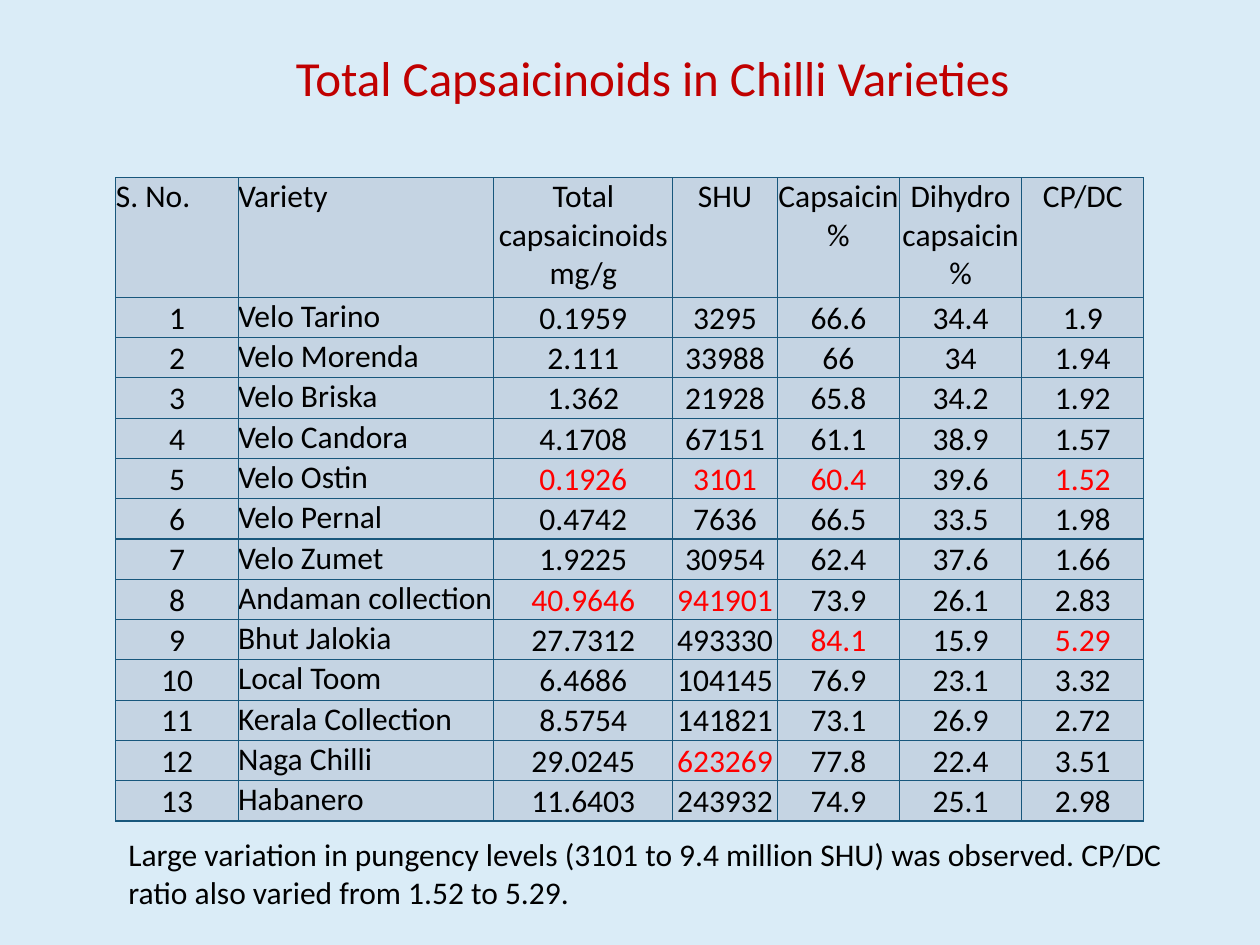
"""Build a slide with a table of total capsaicinoids in chilli varieties."""
import lxml.etree
import pptx
import pptx.dml.color
import pptx.enum.text
import pptx.oxml.ns
import pptx.util

Inches = pptx.util.Inches
ALIGN = pptx.enum.text.PP_ALIGN
ANCHOR = pptx.enum.text.MSO_ANCHOR
COLORS = {
    "background": "DAECF7",
    "cell": "C5D4E3",
    "border": "18577C",
    "title": "C00000",
    "text": "000000",
    "highlight": "FF0000",
}
COL_WIDTHS = [0.97, 2.03, 1.42, 0.83, 0.97, 0.97, 0.97]
HEADER_HEIGHT, ROW_HEIGHT = 0.95, 0.32
HEADER = ["S. No.", "Variety", "Total capsaicinoids mg/g", "SHU",
          "Capsaicin %", "Dihydro\ncapsaicin %", "CP/DC"]
VARIETIES = [
    ("Velo Tarino", "0.1959", "3295", "66.6", "34.4", "1.9"),
    ("Velo Morenda", "2.111", "33988", "66", "34", "1.94"),
    ("Velo Briska", "1.362", "21928", "65.8", "34.2", "1.92"),
    ("Velo Candora", "4.1708", "67151", "61.1", "38.9", "1.57"),
    ("Velo Ostin", "0.1926", "3101", "60.4", "39.6", "1.52"),
    ("Velo Pernal", "0.4742", "7636", "66.5", "33.5", "1.98"),
    ("Velo Zumet", "1.9225", "30954", "62.4", "37.6", "1.66"),
    ("Andaman collection", "40.9646", "941901", "73.9", "26.1", "2.83"),
    ("Bhut Jalokia", "27.7312", "493330", "84.1", "15.9", "5.29"),
    ("Local Toom", "6.4686", "104145", "76.9", "23.1", "3.32"),
    ("Kerala Collection", "8.5754", "141821", "73.1", "26.9", "2.72"),
    ("Naga Chilli", "29.0245", "623269", "77.8", "22.4", "3.51"),
    ("Habanero", "11.6403", "243932", "74.9", "25.1", "2.98"),
]
HIGHLIGHTS = {"0.1926", "3101", "60.4", "1.52", "40.9646", "941901",
              "84.1", "5.29", "623269"}


def rgb(name):
    return pptx.dml.color.RGBColor.from_string(COLORS[name])


def write_text(tf, text, size=18, color="text", align=ALIGN.LEFT):
    for i, line in enumerate(text.split("\n")):
        p = tf.add_paragraph() if i else tf.paragraphs[0]
        p.alignment = align
        r = p.add_run()
        r.text = line
        r.font.name = "Calibri"
        r.font.size = pptx.util.Pt(size)
        r.font.color.rgb = rgb(color)


def add_text_box(slide, text, left, top, width, height, wrap=True, **fmt):
    tf = slide.shapes.add_textbox(
        Inches(left), Inches(top), Inches(width), Inches(height)).text_frame
    tf.word_wrap = wrap
    tf.auto_size = pptx.enum.text.MSO_AUTO_SIZE.SHAPE_TO_FIT_TEXT
    write_text(tf, text, **fmt)


def set_borders(cell, color, width):
    qn = pptx.oxml.ns.qn
    tc_pr = cell._tc.get_or_add_tcPr()
    for side in ("a:lnL", "a:lnR", "a:lnT", "a:lnB"):
        ln = lxml.etree.SubElement(tc_pr, qn(side), w=str(pptx.util.Pt(width)))
        fill = lxml.etree.SubElement(ln, qn("a:solidFill"))
        lxml.etree.SubElement(fill, qn("a:srgbClr"), val=COLORS[color])


def fill_cell(cell, text, align, anchor):
    cell.margin_left = cell.margin_right = 0
    cell.margin_top = cell.margin_bottom = 0
    cell.vertical_anchor = anchor
    set_borders(cell, "border", 0.75)
    cell.fill.solid()
    cell.fill.fore_color.rgb = rgb("cell")
    color = "highlight" if text in HIGHLIGHTS else "text"
    write_text(cell.text_frame, text, color=color, align=align)


def add_variety_table(slide, left, top):
    rows = [HEADER] + [(str(n), *row) for n, row in enumerate(VARIETIES, 1)]
    heights = [HEADER_HEIGHT] + [ROW_HEIGHT] * len(VARIETIES)
    table = slide.shapes.add_table(
        len(rows), len(HEADER), Inches(left), Inches(top),
        Inches(sum(COL_WIDTHS)), Inches(sum(heights))).table
    for column, width in zip(table.columns, COL_WIDTHS):
        column.width = Inches(width)
    for i, (values, height) in enumerate(zip(rows, heights)):
        table.rows[i].height = Inches(height)
        for j, text in enumerate(values):
            is_left = j == 1 or (i == 0 and j == 0)
            is_top = i == 0 or j == 1
            fill_cell(table.cell(i, j), text,
                      ALIGN.LEFT if is_left else ALIGN.CENTER,
                      ANCHOR.TOP if is_top else ANCHOR.BOTTOM)


def main():
    prs = pptx.Presentation()
    prs.slide_width, prs.slide_height = Inches(10), Inches(7.5)
    slide = prs.slides.add_slide(prs.slide_layouts[6])
    slide.background.fill.solid()
    slide.background.fill.fore_color.rgb = rgb("background")
    add_variety_table(slide, 0.92, 1.41)
    add_text_box(slide, "Total Capsaicinoids in Chilli Varieties",
                 2.25, 0.33, 5.93, 0.57, wrap=False, size=28, color="title")
    add_text_box(slide, "Large variation in pungency levels (3101 to 9.4 million "
                 "SHU) was observed. CP/DC ratio also varied from 1.52 to 5.29.",
                 0.92, 6.58, 8.58, 0.71)
    prs.save("out.pptx")


if __name__ == "__main__":
    main()
